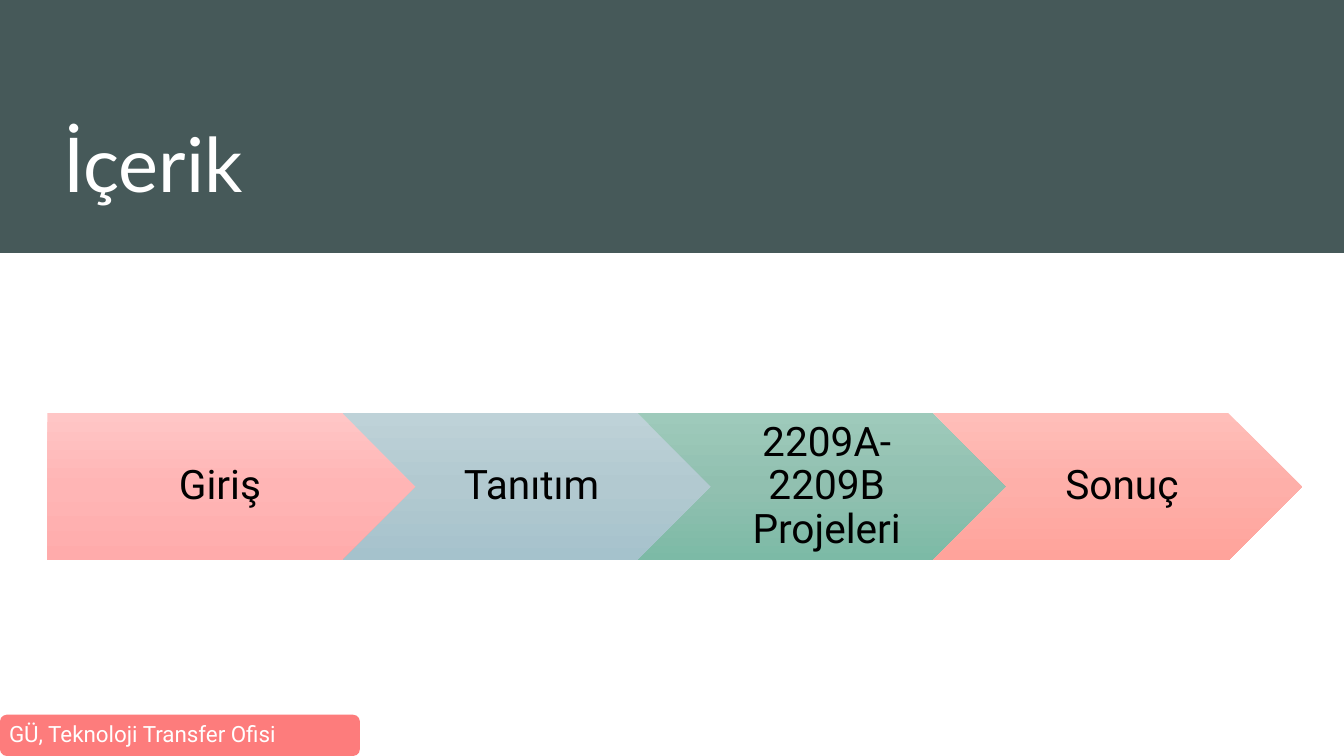
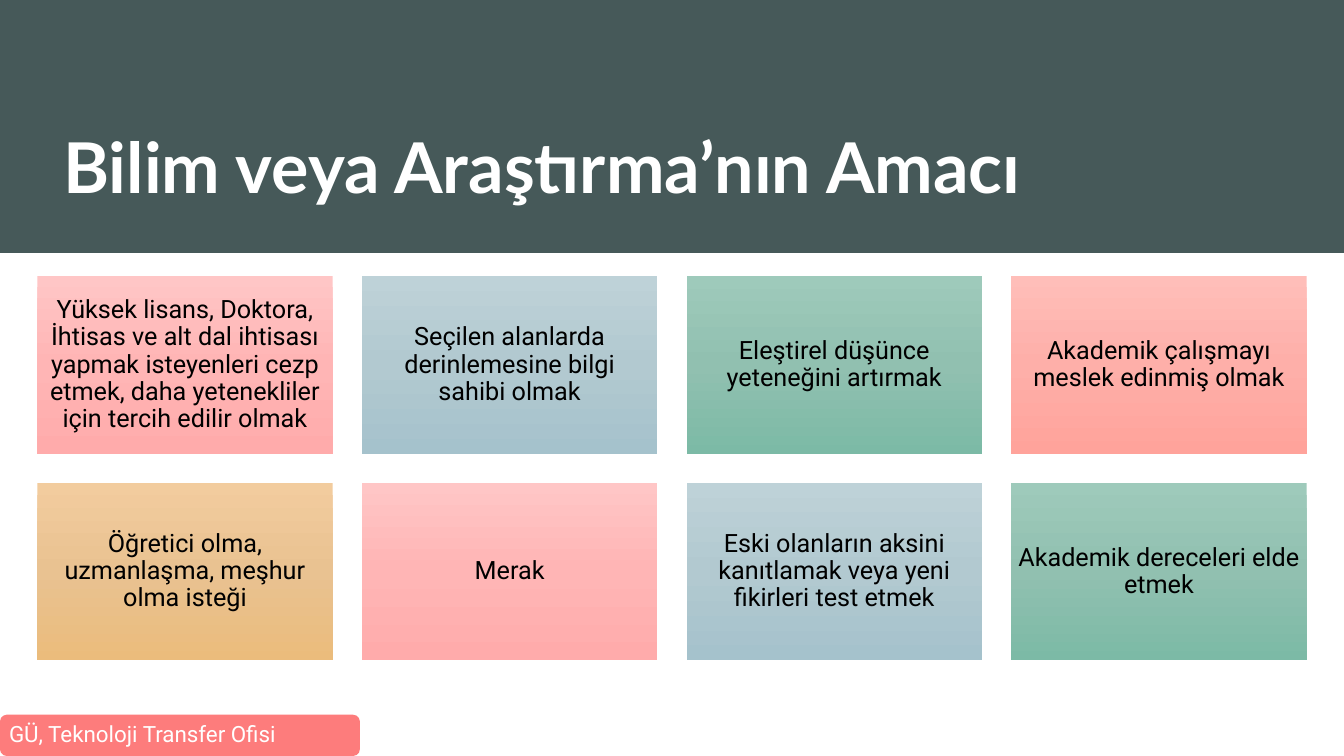
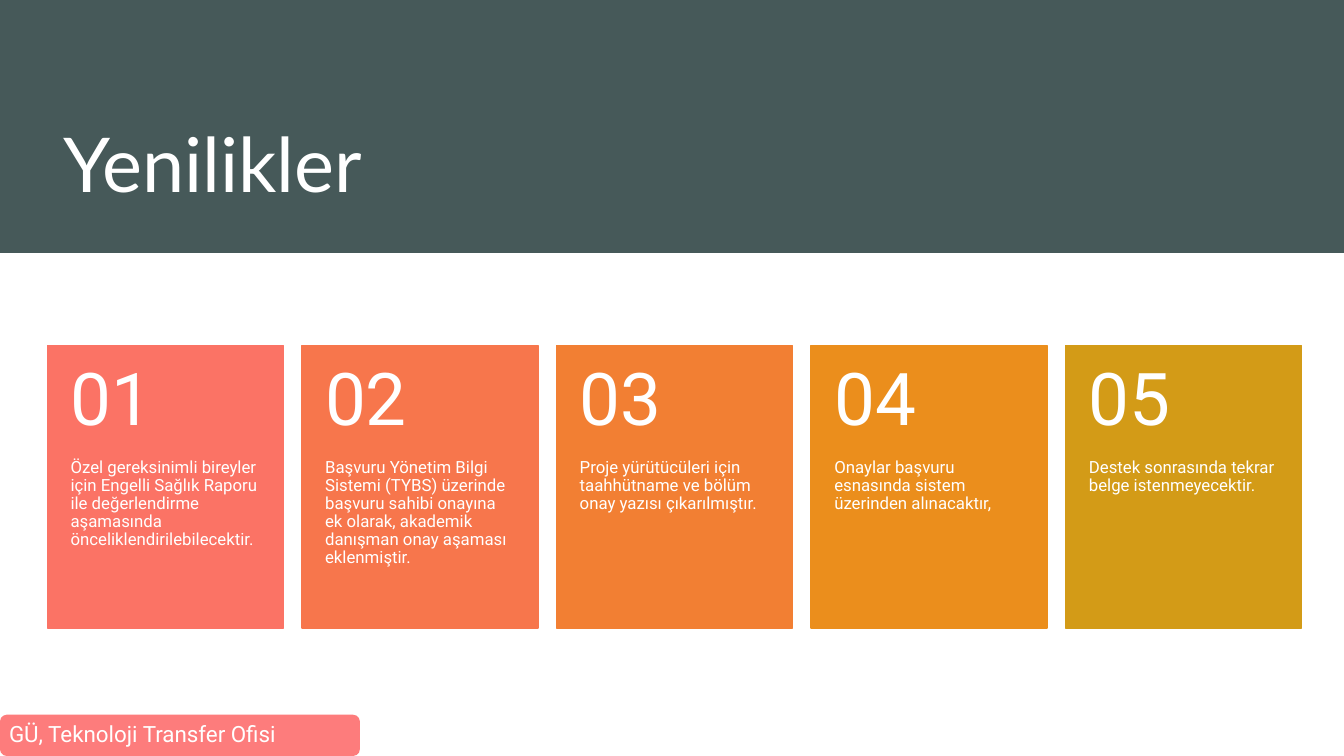
from copy import deepcopy

from pptx import Presentation
from pptx.dml.color import RGBColor
from pptx.enum.shapes import MSO_SHAPE as Kind
from pptx.enum.text import MSO_ANCHOR as Anchor, PP_ALIGN as Align
from pptx.oxml.ns import qn
from pptx.util import Inches, Pt

COLORS = {
    "white": "FFFFFF",
    "black": "000000",
    "band": "465959",
    "footer": "FD7C7C",
}
TINTS = {
    "pink": ("FFC6C6", "FFB5B5", "FFABAB"),
    "blue": ("BED2D8", "B2C9D0", "A5C2CC"),
    "green": ("9ECABB", "91C0B0", "7CBAA6"),
    "coral": ("FFBEB9", "FEAFA9", "FFA39B"),
    "sand": ("F2CC9E", "E9C291", "EBBC7C"),
}
tints = list(TINTS.values())


def write(shape, text, size, color="white", font="Roboto", bold=False,
          align=Align.LEFT, anchor=Anchor.MIDDLE, inset=(0.07,) * 4):
    """Fill a shape with one paragraph; inset is left, top, right, bottom."""
    frame = shape.text_frame
    frame.word_wrap = True
    frame.vertical_anchor = anchor
    (frame.margin_left, frame.margin_top,
     frame.margin_right, frame.margin_bottom) = map(Inches, inset)
    para = frame.paragraphs[0]
    para.alignment = align
    para.line_spacing = 0.9
    run = para.add_run()
    run.text = text
    run.font.name = font
    run.font.size = Pt(size)
    run.font.bold = bold
    run.font.color.rgb = RGBColor.from_string(COLORS[color])


def block(slide, kind, box, fill):
    """Add a borderless shape; fill is one hex colour or three gradient stops."""
    shape = slide.shapes.add_shape(kind, *map(Inches, box))
    shape.shadow.inherit = False
    shape.line.fill.background()
    if isinstance(fill, str):
        shape.fill.solid()
        shape.fill.fore_color.rgb = RGBColor.from_string(fill)
        return shape
    shape.fill.gradient()
    shape.fill.gradient_angle = 270
    first = shape._element.spPr.find(".//" + qn("a:gs"))
    first.addnext(deepcopy(first))
    for stop, tint, place in zip(shape.fill.gradient_stops, fill, (0, 0.5, 1)):
        stop.color.rgb = RGBColor.from_string(tint)
        stop.position = place
    return shape


deck = Presentation()
deck.slide_width = Inches(13.33)
deck.slide_height = Inches(7.5)

# Title band and footer on every slide
slides = []
for title, size, bold in (
    ("İçerik", 54, False),
    ("Bilim veya Araştırma’nın Amacı", 50, True),
    ("Yenilikler", 54, False),
):
    slide = deck.slides.add_slide(deck.slide_layouts[6])
    block(slide, Kind.RECTANGLE, (0, 0, 13.33, 2.51), COLORS["band"])
    head = slide.shapes.add_textbox(*map(Inches, (0.53, 0.4, 11.89, 1.72)))
    write(head, title, size, font="Lato", bold=bold, anchor=Anchor.BOTTOM,
          inset=(0.1, 0.05, 0.1, 0.05))
    foot = block(slide, Kind.ROUNDED_RECTANGLE, (0, 7.09, 3.57, 0.41),
                 COLORS["footer"])
    write(foot, "GÜ, Teknoloji Transfer Ofisi", 16)
    slides.append(slide)
agenda, aims, news = slides

# Agenda: overlapping arrows
steps = ("Giriş", "Tanıtım", "2209A- 2209B Projeleri", "Sonuç")
wide = 3.66
for i, step in enumerate(steps):
    kind = Kind.CHEVRON if i else Kind.PENTAGON
    left = 0.13 if i else 0.17
    arrow = block(agenda, kind, (0.47 + i * wide * 0.8, 4.1, wide, 1.46),
                  tints[i])
    write(arrow, step, 29, "black", align=Align.CENTER,
          inset=(left, 0.08, 0.04, 0.08))

# Aims: grid of four columns
goals = (
    "Yüksek lisans, Doktora, İhtisas ve alt dal ihtisası yapmak isteyenleri "
    "cezp etmek, daha yetenekliler için tercih edilir olmak",
    "Seçilen alanlarda derinlemesine bilgi sahibi olmak",
    "Eleştirel düşünce yeteneğini artırmak",
    "Akademik çalışmayı meslek edinmiş olmak",
    "Öğretici olma, uzmanlaşma, meşhur olma isteği",
    "Merak",
    "Eski olanların aksini kanıtlamak veya yeni fikirleri test etmek",
    "Akademik dereceleri elde etmek",
)
wide, high, gap = 2.93, 1.76, 0.29
for i, goal in enumerate(goals):
    row, col = divmod(i, 4)
    box = (0.37 + col * (wide + gap), 2.74 + row * (high + gap), wide, high)
    tile = block(aims, Kind.RECTANGLE, box, tints[i % len(tints)])
    write(tile, goal, 18, "black", align=Align.CENTER)

# News: numbered cards
cards = (
    ("FB7365", "Özel gereksinimli bireyler için Engelli Sağlık Raporu ile "
               "değerlendirme aşamasında önceliklendirilebilecektir."),
    ("F7764C", "Başvuru Yönetim Bilgi Sistemi (TYBS) üzerinde başvuru sahibi "
               "onayına ek olarak, akademik danışman onay aşaması eklenmiştir."),
    ("F27F33", "Proje yürütücüleri için taahhütname ve bölüm onay yazısı "
               "çıkarılmıştır."),
    ("EB8E1C", "Onaylar başvuru esnasında sistem üzerinden alınacaktır,"),
    ("D39B17", "Destek sonrasında tekrar belge istenmeyecektir."),
)
top, wide, high, cap = 3.43, 2.34, 2.8, 1.12
pitch = (10.57 - 0.47) / 4
for i, (fill, text) in enumerate(cards):
    left = 0.47 + i * pitch
    card = block(news, Kind.RECTANGLE, (left, top, wide, high), fill)
    card.line.color.rgb = RGBColor.from_string(fill)
    card.line.width = Pt(1)
    write(card, text, 12, anchor=Anchor.TOP, inset=(0.23, cap, 0.23, 0.36))
    label = news.shapes.add_textbox(*map(Inches, (left, top, wide, cap)))
    write(label, f"{i + 1:02}", 52, inset=(0.23, 0.18, 0.23, 0.18))

deck.save("out.pptx")
